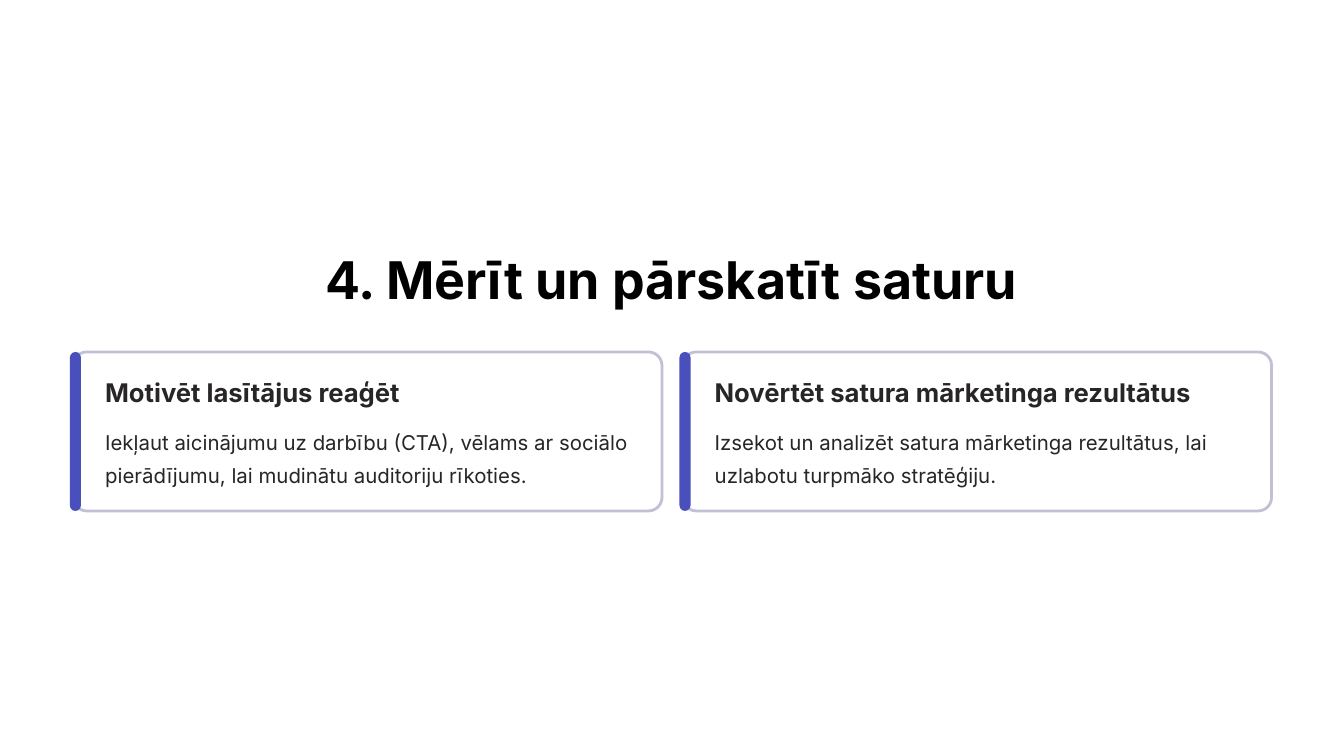
from pptx import Presentation
from pptx.dml.color import RGBColor
from pptx.enum import shapes, text
from pptx.util import Pt

FONT = "Inter"
CARDS = [
    ("Motivēt lasītājus reaģēt",
     "Iekļaut aicinājumu uz darbību (CTA), vēlams ar sociālo pierādījumu, "
     "lai mudinātu auditoriju rīkoties."),
    ("Novērtēt satura mārketinga rezultātus",
     "Izsekot un analizēt satura mārketinga rezultātus, "
     "lai uzlabotu turpmāko stratēģiju."),
]


def color(value):
    return RGBColor.from_string(value)


def add_text(slide, box, content, size, leading, fill="272525", bold=False,
             align=text.PP_ALIGN.LEFT, wrap=False):
    sp = slide.shapes.add_textbox(*map(Pt, box))
    tf = sp.text_frame
    tf.word_wrap = wrap
    tf.margin_left = tf.margin_right = tf.margin_top = tf.margin_bottom = 0
    p = tf.paragraphs[0]
    p.alignment = align
    p.line_spacing = Pt(leading)
    r = p.add_run()
    r.text = content
    r.font.name, r.font.size, r.font.bold = FONT, Pt(size), bold
    r.font.color.rgb = color(fill)


def add_rounded(slide, box, radius, fill, line=None):
    sp = slide.shapes.add_shape(shapes.MSO_SHAPE.ROUNDED_RECTANGLE, *map(Pt, box))
    sp.shadow.inherit = False
    sp.adjustments[0] = radius
    sp.fill.solid()
    sp.fill.fore_color.rgb = color(fill)
    if line:
        sp.line.color.rgb = color(line)
        sp.line.width = Pt(2.4)
    else:
        sp.line.fill.background()


def add_title(slide, box, content):
    add_text(slide, box, content, 44.5, 55.5, "000000", bold=True,
             align=text.PP_ALIGN.CENTER)


def add_card(slide, box, heading, body):
    x, y, w, h = box
    # Outlined panel with the accent bar over its left edge
    add_rounded(slide, (x + 2.8, y, w - 2.8, h), 0.085, "FFFFFF", "C0C1D7")
    add_rounded(slide, (x, y, 9.5, h), 0.5, "4950BC")
    # Heading and body share one left edge
    left, width = x + 30.2, w - 50.3
    add_text(slide, (left, y + 20.2, width, 28), heading, 22, 27.5, bold=True)
    add_text(slide, (left, y + 59.1, width, 57), body, 17.5, 28.5, wrap=True)


def main():
    prs = Presentation()
    prs.slide_width, prs.slide_height = Pt(1152), Pt(648)
    slide = prs.slides.add_slide(prs.slide_layouts[6])
    slide.background.fill.solid()
    slide.background.fill.fore_color.rgb = color("FFFFFF")

    # Title
    add_title(slide, (278, 210.2, 595.4, 56.2), "4. Mērīt un pārskatīt saturu")

    # Row of cards
    left, top, width, height, gap = 59.9, 301.7, 507.5, 136.3, 15
    for i, (heading, body) in enumerate(CARDS):
        box = (left + i * (width + gap), top, width, height)
        add_card(slide, box, heading, body)

    prs.save("out.pptx")


if __name__ == "__main__":
    main()
